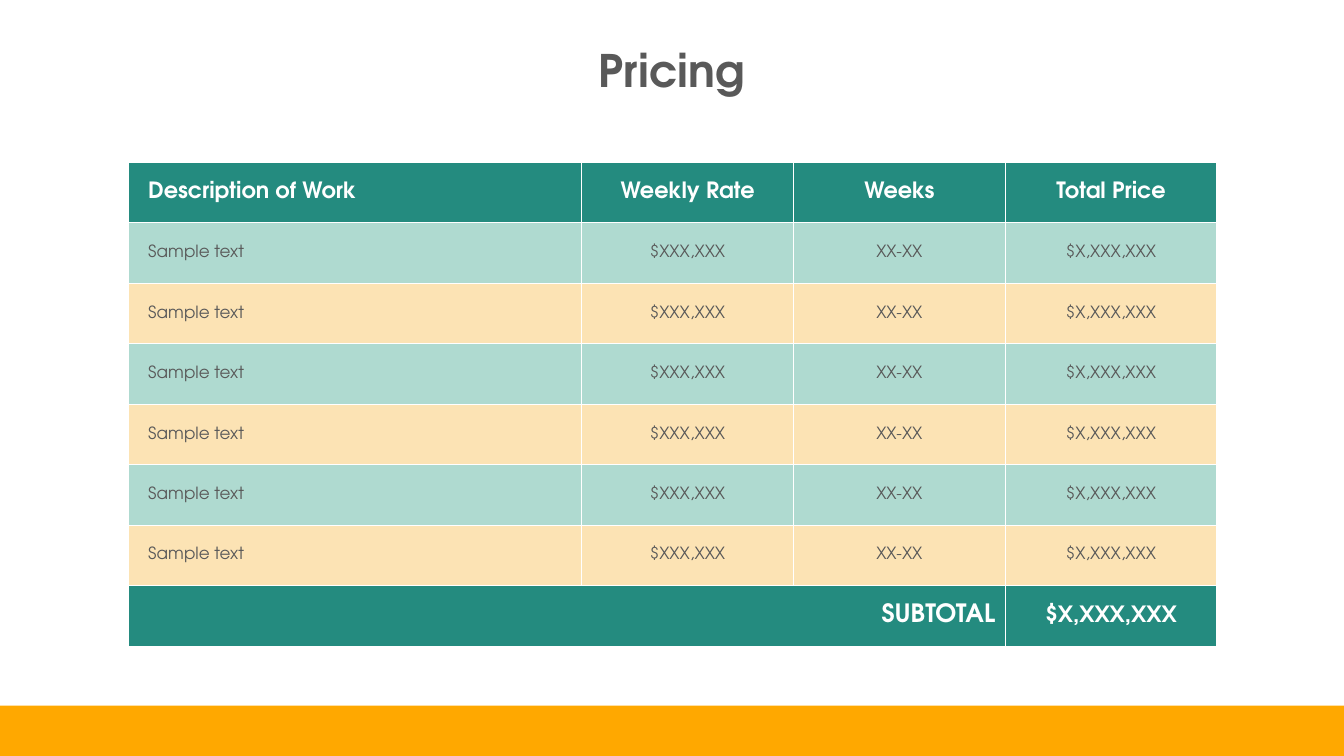
from lxml import etree
from pptx import Presentation
from pptx.dml.color import RGBColor
from pptx.enum.shapes import MSO_SHAPE
from pptx.enum.text import MSO_ANCHOR, MSO_AUTO_SIZE, PP_ALIGN
from pptx.oxml.ns import qn
from pptx.util import Inches, Pt

LEFT, CENTER, RIGHT = PP_ALIGN.LEFT, PP_ALIGN.CENTER, PP_ALIGN.RIGHT
MIDDLE = MSO_ANCHOR.MIDDLE
FIT = MSO_AUTO_SIZE.SHAPE_TO_FIT_TEXT
RECT = MSO_SHAPE.RECTANGLE

WHITE = RGBColor(0xFF, 0xFF, 0xFF)
GRAY = RGBColor(0x59, 0x59, 0x59)
TEAL = RGBColor(0x24, 0x8B, 0x7F)
MINT = RGBColor(0xAF, 0xDA, 0xD0)
CREAM = RGBColor(0xFC, 0xE3, 0xB4)
ORANGE = RGBColor(0xFF, 0xA8, 0x00)

FONT = "TeX Gyre Adventor"
WIDTH, HEIGHT = 13.33, 7.5
COLS = [4.5, 2.1, 2.1, 2.1]
ROW = 0.6
BAR = 0.5

HEAD = ["Description of Work", "Weekly Rate", "Weeks", "Total Price"]
ITEM = ["Sample text", "$XXX,XXX", "XX-XX", "$X,XXX,XXX"]
TOTAL = ["SUBTOTAL", "", "", "$X,XXX,XXX"]
ROWS = [HEAD] + [ITEM] * 6 + [TOTAL]


class Page:
    def __init__(self, deck):
        self.slide = deck.slides.add_slide(deck.slide_layouts[5])

    def label(self, frame, text, size, color, bold, align):
        para = frame.paragraphs[0]
        para.text = text
        para.alignment = align
        style = {"name": FONT, "size": Pt(size), "bold": bold}
        for font in (para.font, para.runs[0].font):
            for key, value in style.items():
                setattr(font, key, value)
            font.color.rgb = color

    def title(self, text, left, top, width, height):
        shape = self.slide.shapes.title
        place = {"left": left, "top": top, "width": width, "height": height}
        for key, value in place.items():
            setattr(shape, key, Inches(value))
        frame = shape.text_frame
        frame.word_wrap = True
        frame.auto_size = FIT
        frame.vertical_anchor = MIDDLE
        self.label(frame, text, 32, GRAY, True, CENTER)

    def bar(self, left, top, width, height, color):
        shape = self.slide.shapes.add_shape(
            RECT, Inches(left), Inches(top), Inches(width), Inches(height))
        shape.shadow.inherit = False
        shape.fill.solid()
        shape.fill.fore_color.rgb = color
        shape.line.fill.background()

    def border(self, cell):
        """Draw a thin white line on all four sides; call before the fill."""
        props = cell._tc.get_or_add_tcPr()
        for side in ("lnL", "lnR", "lnT", "lnB"):
            line = etree.SubElement(props, qn(f"a:{side}"), w=str(Pt(1)))
            fill = etree.SubElement(line, qn("a:solidFill"))
            etree.SubElement(fill, qn("a:srgbClr"), val=str(WHITE))

    def cell(self, cell, text, fill, size, color, bold, align, inset):
        self.border(cell)
        cell.fill.solid()
        cell.fill.fore_color.rgb = fill
        cell.vertical_anchor = MIDDLE
        cell.margin_left = Inches(inset)
        if text:
            self.label(cell.text_frame, text, size, color, bold, align)

    def table(self, left, top, rows):
        last = len(rows) - 1
        table = self.slide.shapes.add_table(
            len(rows), len(COLS), Inches(left), Inches(top),
            Inches(sum(COLS)), Inches(ROW * len(rows))).table
        for col, width in zip(table.columns, COLS):
            col.width = Inches(width)
        for r, row in enumerate(rows):
            table.rows[r].height = Inches(ROW)
            edge = r in (0, last)
            fill = TEAL if edge else MINT if r % 2 else CREAM
            color = WHITE if edge else GRAY
            for c, text in enumerate(row):
                size = 16 if edge else 12
                align, inset = (CENTER, 0.1) if c else (LEFT, 0.2)
                if r == last and c == 0:
                    size, align = 18, RIGHT
                self.cell(table.cell(r, c), text, fill, size, color, edge,
                          align, inset)
        table.cell(last, 0).merge(table.cell(last, 2))


def main():
    deck = Presentation()
    deck.slide_width = Inches(WIDTH)
    deck.slide_height = Inches(HEIGHT)
    page = Page(deck)
    page.title("Pricing", 3.12, 0.37, 7.09, 0.64)
    page.table(1.27, 1.61, ROWS)
    page.bar(0, HEIGHT - BAR, WIDTH, BAR, ORANGE)
    deck.save("out.pptx")


if __name__ == "__main__":
    main()
